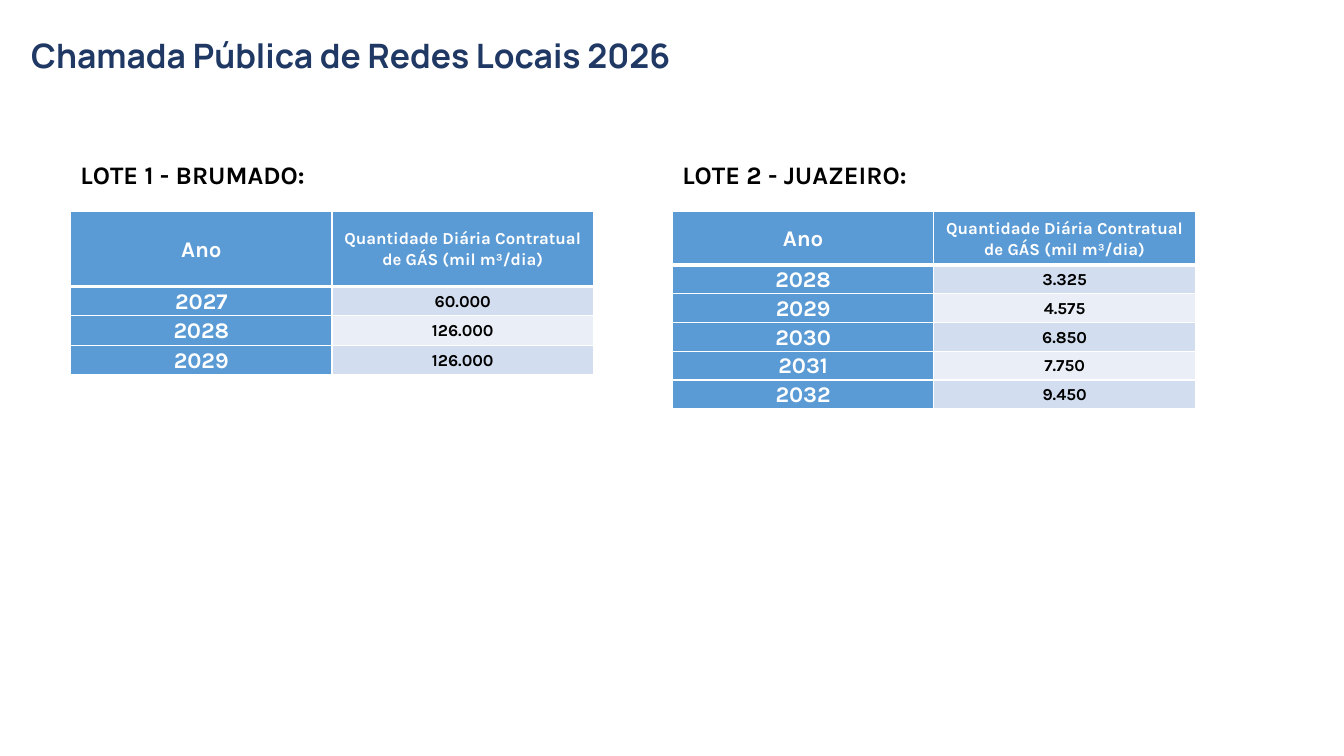
from dataclasses import dataclass

from lxml.etree import SubElement
from pptx import Presentation
from pptx.dml.color import RGBColor as Rgb
from pptx.enum.text import MSO_ANCHOR as Anchor, MSO_AUTO_SIZE as AutoSize, PP_ALIGN as Align
from pptx.oxml.ns import qn
from pptx.util import Pt


@dataclass(frozen=True)
class Theme:
    """Colours, fonts and type sizes of the slide."""
    navy: str = "203864"
    black: str = "000000"
    white: str = "FFFFFF"
    blue: str = "5B9BD5"
    bands: tuple = ("D2DEEF", "EAEFF7")
    title_font: str = "Manrope"
    body_font: str = "Karla"
    title_size: int = 24
    lot_size: int = 18
    year_size: int = 16
    quantity_size: int = 12


THEME = Theme()
HEADINGS = ("Ano", "Quantidade Diária Contratual de GÁS (mil m³/dia)")
LOTS = (
    dict(name="LOTE 1 - BRUMADO:", left=50.4, name_width=373.7, header=53.4, row=21,
         data=(("2027", "60.000"), ("2028", "126.000"), ("2029", "126.000"))),
    dict(name="LOTE 2 - JUAZEIRO:", left=480.3, name_width=470.9, header=38, row=20.5,
         data=(("2028", "3.325"), ("2029", "4.575"), ("2030", "6.850"),
               ("2031", "7.750"), ("2032", "9.450"))),
)
NAME_TOP, NAME_HEIGHT = 99.4, 36.7
TABLE_TOP, COLUMN_WIDTH = 151.2, 186.8


def apply(target, values):
    """Set each attribute named in values on target."""
    for name, value in values.items():
        setattr(target, name, value)


def place(shape, left, top, width, height):
    """Move and size a shape in points."""
    apply(shape, dict(left=Pt(left), top=Pt(top), width=Pt(width), height=Pt(height)))


def write(frame, text, font, size, colour, align, spacing=1.0):
    """Write one bold paragraph into a text frame."""
    frame.text = text
    paragraph = frame.paragraphs[0]
    apply(paragraph, dict(alignment=align, line_spacing=spacing))
    run_font = paragraph.runs[0].font
    apply(run_font, dict(name=font, size=Pt(size), bold=True))
    run_font.color.rgb = Rgb.from_string(colour)


def add_title(slide, text):
    """Format the title placeholder and fill it in."""
    title = slide.shapes.title
    place(title, 15.1, 21.6, 594, 36)
    write(title.text_frame, text, THEME.title_font, THEME.title_size, THEME.navy, Align.LEFT)
    apply(title.text_frame, dict(word_wrap=True, vertical_anchor=Anchor.TOP,
                                 auto_size=AutoSize.SHAPE_TO_FIT_TEXT))


def add_lot_name(slide, lot):
    """Add the heading above a lot's table."""
    heading = slide.shapes.add_textbox(Pt(lot["left"]), Pt(NAME_TOP),
                                       Pt(lot["name_width"]), Pt(NAME_HEIGHT))
    write(heading.text_frame, lot["name"], THEME.body_font, THEME.lot_size, THEME.black,
          Align.JUSTIFY, 1.5)
    apply(heading.text_frame, dict(word_wrap=True, auto_size=AutoSize.SHAPE_TO_FIT_TEXT))


def set_borders(cell, widths):
    """Draw white cell borders, given widths by side."""
    properties = cell._tc.get_or_add_tcPr()
    for position, side in enumerate("LRTB"):
        line = SubElement(properties, qn(f"a:ln{side}"), w=str(Pt(widths[side])))
        fill = SubElement(line, qn("a:solidFill"))
        SubElement(fill, qn("a:srgbClr"), val=THEME.white)
        properties.remove(line)
        properties.insert(position, line)


def format_cell(cell, text, row, column):
    """Write and colour one cell by its row and column."""
    is_blue = row == 0 or column == 0
    size = THEME.quantity_size if column else THEME.year_size
    write(cell.text_frame, text, THEME.body_font, size,
          THEME.white if is_blue else THEME.black, Align.CENTER, 1.07)
    apply(cell, dict(vertical_anchor=Anchor.MIDDLE, margin_left=Pt(5), margin_right=Pt(5),
                     margin_top=0, margin_bottom=0))
    cell.fill.solid()
    cell.fill.fore_color.rgb = Rgb.from_string(
        THEME.blue if is_blue else THEME.bands[(row - 1) % 2])
    set_borders(cell, dict(L=1, R=1, T=3 if row == 1 else 1, B=3 if row == 0 else 1))


def add_lot_table(slide, lot):
    """Add the table of years and contracted quantities."""
    rows = (HEADINGS, *lot["data"])
    height = lot["header"] + lot["row"] * len(lot["data"])
    table = slide.shapes.add_table(len(rows), len(HEADINGS), Pt(lot["left"]), Pt(TABLE_TOP),
                                   Pt(COLUMN_WIDTH * len(HEADINGS)), Pt(height)).table
    for row, texts in enumerate(rows):
        table.rows[row].height = Pt(lot["row"] if row else lot["header"])
        for column, text in enumerate(texts):
            format_cell(table.cell(row, column), text, row, column)


def main():
    """Build the slide and save it."""
    deck = Presentation()
    apply(deck, dict(slide_width=Pt(960), slide_height=Pt(540)))
    slide = deck.slides.add_slide(deck.slide_layouts[5])
    add_title(slide, "Chamada Pública de Redes Locais 2026")
    for lot in LOTS:
        add_lot_name(slide, lot)
        add_lot_table(slide, lot)
    deck.save("out.pptx")


if __name__ == "__main__":
    main()
